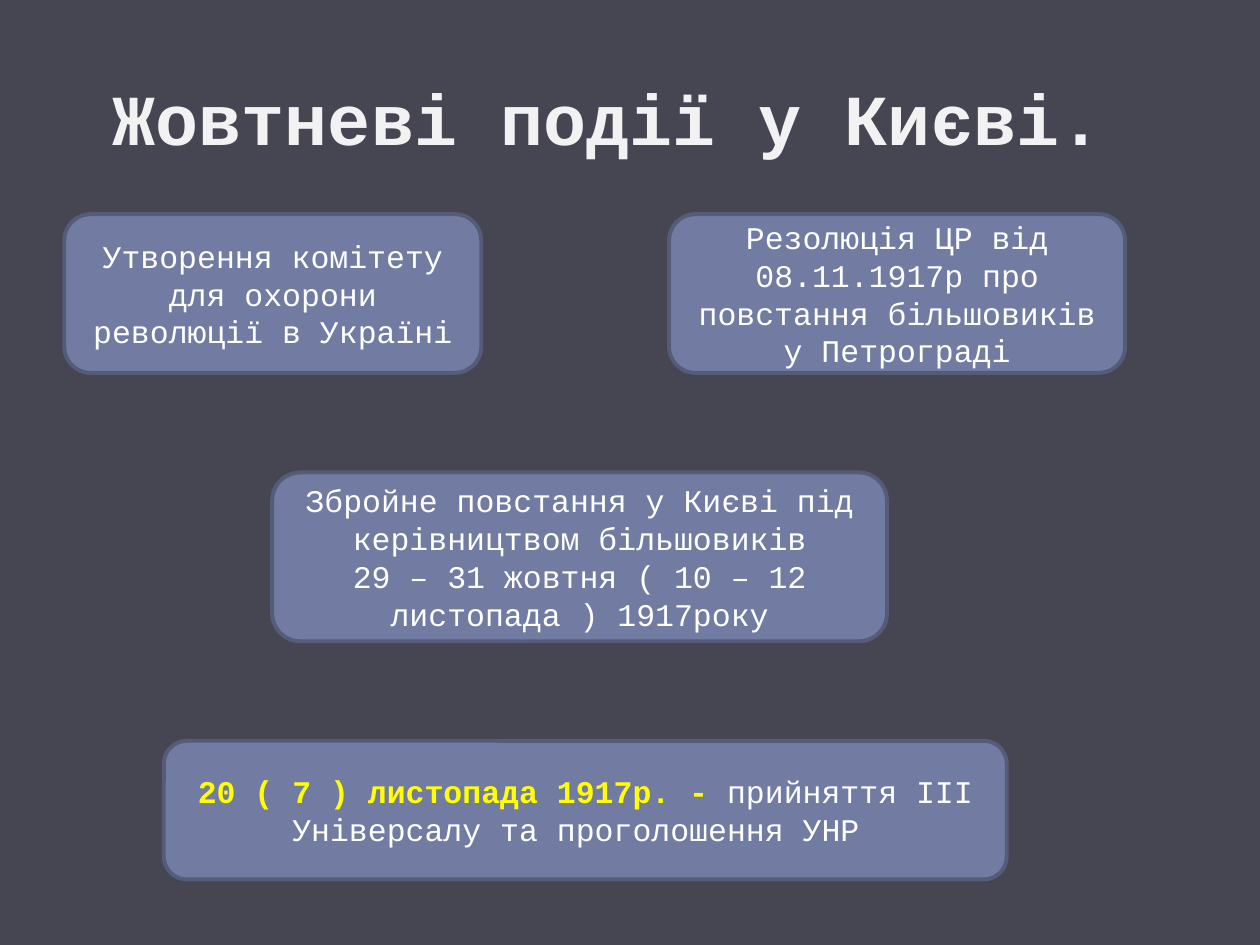
from pptx import Presentation
from pptx.dml.color import RGBColor
from pptx.enum.shapes import MSO_SHAPE
from pptx.enum.text import MSO_ANCHOR, PP_ALIGN
from pptx.util import Inches, Pt

FONT = "Courier New"
BACKGROUND, BOX_FILL, BOX_LINE = "464653", "727CA3", "545C79"
TITLE_COLOR, TEXT_COLOR, DATE_COLOR = "F2F2F2", "FFFFFF", "FFFF00"

TITLE = "Жовтневі події у Києві. "

# Each event: (left, top, width, height) in inches, then paragraphs of (text, is_date) runs
TOP_ROW, TOP_HEIGHT = 1.7, 1.26
EVENTS = [
    ((0.51, TOP_ROW, 3.31, TOP_HEIGHT),
     [[("Утворення комітету для охорони революції в Україні", False)]]),
    ((5.31, TOP_ROW, 3.62, TOP_HEIGHT),
     [[("Резолюція ЦР від 08.11.1917р про повстання більшовиків у Петрограді", False)]]),
    ((2.16, 3.75, 4.88, 1.34),
     [[("Збройне повстання у Києві під керівництвом більшовиків", False)],
      [("29 – 31 жовтня ( 10 – 12 листопада ) 1917року", False)]]),
    ((1.3, 5.88, 6.69, 1.1),
     [[("20 ( 7 ) листопада 1917р. - ", True),
       ("прийняття ІІІ Універсалу та проголошення УНР ", False)]]),
]


def color(value):
    return RGBColor.from_string(value)


def style_paragraph(paragraph, size):
    paragraph.alignment = PP_ALIGN.CENTER
    paragraph.font.name = FONT
    paragraph.font.size = Pt(size)


def place(shape, box):
    shape.left, shape.top, shape.width, shape.height = map(Inches, box)


def add_title(slide):
    title = slide.shapes.title
    place(title, (0.5, 0.3, 9, 1.25))
    title.text_frame.text = TITLE
    title.text_frame.vertical_anchor = MSO_ANCHOR.MIDDLE
    paragraph = title.text_frame.paragraphs[0]
    style_paragraph(paragraph, 41)
    paragraph.font.bold = True
    paragraph.font.color.rgb = color(TITLE_COLOR)


def add_event(slide, box, paragraphs):
    shape = slide.shapes.add_shape(MSO_SHAPE.ROUNDED_RECTANGLE, *map(Inches, box))
    shape.shadow.inherit = False
    shape.fill.solid()
    shape.fill.fore_color.rgb = color(BOX_FILL)
    shape.line.color.rgb = color(BOX_LINE)
    shape.line.width = Pt(2.25)
    frame = shape.text_frame
    frame.word_wrap = True
    frame.vertical_anchor = MSO_ANCHOR.MIDDLE
    for index, runs in enumerate(paragraphs):
        paragraph = frame.add_paragraph() if index else frame.paragraphs[0]
        style_paragraph(paragraph, 18)
        for text, is_date in runs:
            run = paragraph.add_run()
            run.text = text
            run.font.bold = is_date
            run.font.color.rgb = color(DATE_COLOR if is_date else TEXT_COLOR)


def main():
    presentation = Presentation()
    presentation.slide_width, presentation.slide_height = Inches(10), Inches(7.5)
    slide = presentation.slides.add_slide(presentation.slide_layouts[5])
    slide.background.fill.solid()
    slide.background.fill.fore_color.rgb = color(BACKGROUND)

    add_title(slide)
    for box, paragraphs in EVENTS:
        add_event(slide, box, paragraphs)

    presentation.save("out.pptx")


if __name__ == "__main__":
    main()
